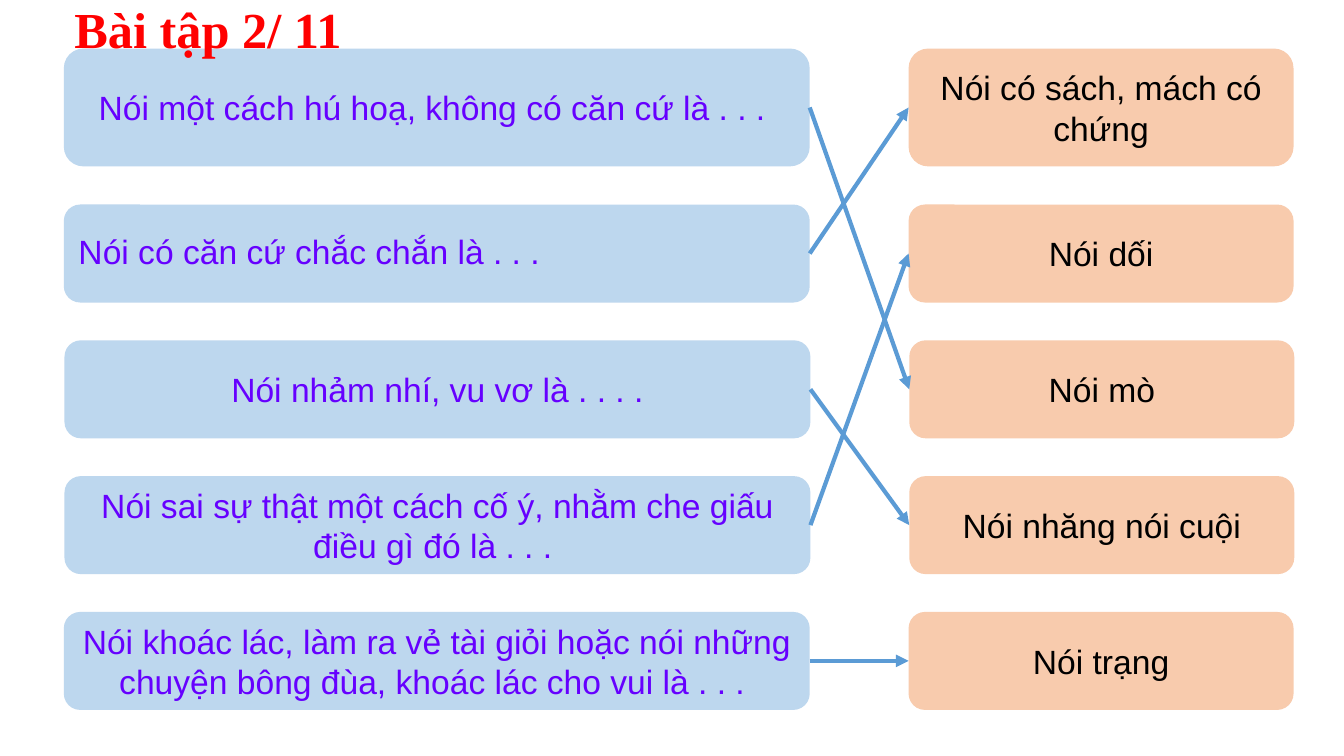
from lxml import etree
from pptx import Presentation
from pptx.dml.color import RGBColor
from pptx.enum import shapes, text
from pptx.oxml import ns
from pptx.util import Pt

TITLE = "Bài tập 2/ 11"
PHRASES = [
    "Nói một cách hú hoạ, không có căn cứ là . . . ",
    "Nói có căn cứ chắc chắn là . . .",
    "Nói nhảm nhí, vu vơ là . . . .",
    "Nói sai sự thật một cách cố ý, nhằm che giấu điều gì đó là . . . ",
    "Nói khoác lác, làm ra vẻ tài giỏi hoặc nói những chuyện bông đùa, khoác lác cho vui là . . . ",
]
ANSWERS = [
    "Nói có sách, mách có chứng",
    "Nói dối",
    "Nói mò",
    "Nói nhăng nói cuội",
    "Nói trạng",
]
MATCHES = [(0, 2), (1, 0), (2, 3), (3, 1), (4, 4)]
LEFT_ALIGNED_PHRASE = 1

BLUE = RGBColor(0xBD, 0xD7, 0xEE)
PEACH = RGBColor(0xF8, 0xCB, 0xAD)
ARROW = RGBColor(0x5B, 0x9B, 0xD5)
VIOLET = RGBColor(0x66, 0x00, 0xFF)
BLACK = RGBColor(0x00, 0x00, 0x00)
RED = RGBColor(0xFF, 0x00, 0x00)

PHRASE_LEFT, PHRASE_WIDTH = 45.6, 532.8
ANSWER_LEFT, ANSWER_WIDTH = 649, 275
FIRST_ROW = (34.7, 84.2)
ROW_TOP, ROW_PITCH, ROW_HEIGHT = 146.1, 97, 70
NUDGED_ROWS, NUDGE = (2, 3), 0.5

BODY_FONT = {"name": "Arial", "size": Pt(24), "bold": False}
TITLE_FONT = {"name": "Times New Roman", "size": Pt(36), "bold": True}


def write(box, words, font, color, align):
    frame = box.text_frame
    frame.vertical_anchor = text.MSO_ANCHOR.MIDDLE
    para = frame.paragraphs[0]
    para.alignment = align
    span = para.add_run()
    span.text = words
    for name, value in font.items():
        setattr(span.font, name, value)
    span.font.color.rgb = color
    return para


def add_card(page, row, left, width, fill, words, color, align):
    top, height = FIRST_ROW if row == 0 else (ROW_TOP + (row - 1) * ROW_PITCH, ROW_HEIGHT)
    left += NUDGE if row in NUDGED_ROWS else 0
    card = page.shapes.add_shape(
        shapes.MSO_SHAPE.ROUNDED_RECTANGLE, Pt(left), Pt(top), Pt(width), Pt(height))
    card.shadow.inherit = False
    card.fill.solid()
    card.fill.fore_color.rgb = fill
    card.line.fill.background()
    card.text_frame.word_wrap = True
    para = write(card, words, BODY_FONT, color, align)
    if align == text.PP_ALIGN.LEFT:
        para.line_spacing = 0.9
        para.space_before = Pt(4.8)
    return card


def add_arrow(page, phrase, answer):
    arrow = page.shapes.add_connector(shapes.MSO_CONNECTOR.STRAIGHT, 0, 0, 0, 0)
    arrow.begin_connect(phrase, 3)
    arrow.end_connect(answer, 1)
    arrow.line.color.rgb = ARROW
    arrow.line.width = Pt(3)
    etree.SubElement(arrow.line._get_or_add_ln(), ns.qn("a:tailEnd"), type="triangle")
    etree.SubElement(arrow._element.spPr, ns.qn("a:effectLst"))


def main():
    deck = Presentation()
    deck.slide_width, deck.slide_height = Pt(960), Pt(540)
    page = deck.slides.add_slide(deck.slide_layouts[6])

    answers = [
        add_card(page, row, ANSWER_LEFT, ANSWER_WIDTH, PEACH, words, BLACK,
                 text.PP_ALIGN.CENTER)
        for row, words in enumerate(ANSWERS)
    ]
    phrases = [
        add_card(page, row, PHRASE_LEFT, PHRASE_WIDTH, BLUE, words, VIOLET,
                 text.PP_ALIGN.LEFT if row == LEFT_ALIGNED_PHRASE else text.PP_ALIGN.CENTER)
        for row, words in enumerate(PHRASES)
    ]
    for phrase, answer in MATCHES:
        add_arrow(page, phrases[phrase], answers[answer])

    title = page.shapes.add_textbox(Pt(46), Pt(0), Pt(225.4), Pt(41))
    title.text_frame.word_wrap = False
    write(title, TITLE, TITLE_FONT, RED, text.PP_ALIGN.LEFT)

    deck.save("out.pptx")


if __name__ == "__main__":
    main()
